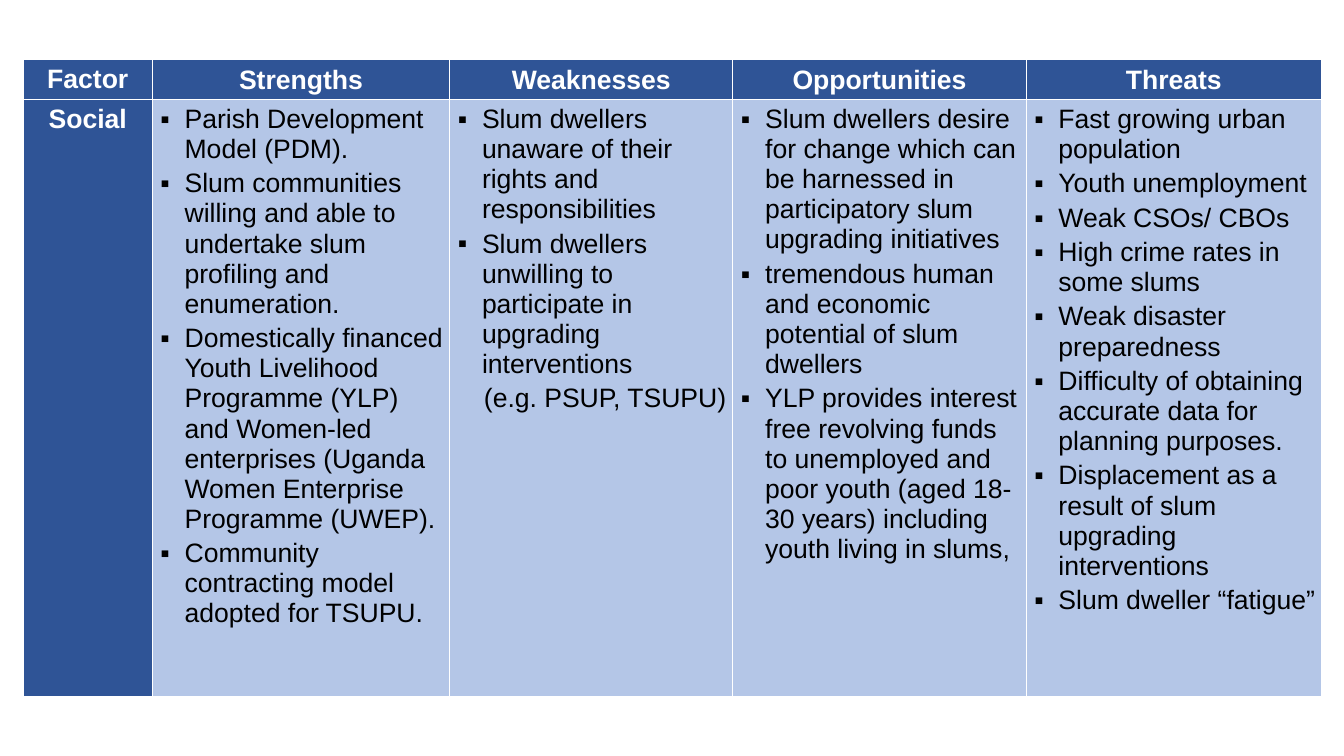
from dataclasses import dataclass

from lxml.etree import SubElement
from pptx import Presentation
from pptx.dml.color import RGBColor
from pptx.enum.text import MSO_ANCHOR, PP_ALIGN
from pptx.oxml import parse_xml
from pptx.oxml.ns import nsdecls, qn
from pptx.util import Pt


@dataclass(frozen=True)
class Theme:
    header: RGBColor = RGBColor(0x2F, 0x54, 0x96)
    body: RGBColor = RGBColor(0xB4, 0xC6, 0xE7)
    light: RGBColor = RGBColor(0xFF, 0xFF, 0xFF)
    dark: RGBColor = RGBColor(0x00, 0x00, 0x00)
    font: str = "Arial"
    size: float = 19


theme = Theme()

# Content: one heading and its points per column
factors = {
    "Strengths": [
        "Parish Development Model (PDM).",
        "Slum communities willing and able to undertake slum profiling and enumeration.",
        "Domestically financed Youth Livelihood Programme (YLP) and Women-led "
        "enterprises (Uganda Women Enterprise Programme (UWEP).",
        "Community contracting model adopted for TSUPU.",
    ],
    "Weaknesses": [
        "Slum dwellers unaware of their rights and responsibilities",
        "Slum dwellers unwilling to participate in upgrading interventions",
        "(e.g. PSUP, TSUPU)",
    ],
    "Opportunities": [
        "Slum dwellers desire for change which can be harnessed in participatory "
        "slum upgrading initiatives",
        "tremendous human and economic potential of slum dwellers",
        "YLP provides interest free revolving funds to unemployed and poor youth "
        "(aged 18-30 years) including youth living in slums,",
    ],
    "Threats": [
        "Fast growing urban population",
        "Youth unemployment",
        "Weak CSOs/ CBOs",
        "High crime rates in some slums",
        "Weak disaster preparedness",
        "Difficulty of obtaining accurate data for planning purposes.",
        "Displacement as a result of slum upgrading interventions",
        "Slum dweller “fatigue”",
    ],
}
column_widths = [92.2, 212.4, 202.3, 209.5, 211]
row_heights = [28.8, 426.2]


def style_cell(cell, fill):
    cell.margin_left = cell.margin_right = Pt(2.9)
    cell.margin_top = cell.margin_bottom = Pt(2.9)
    cell.fill.solid()
    cell.fill.fore_color.rgb = fill
    # Borders come before the fill in the cell properties
    properties = cell._tc.get_or_add_tcPr()
    for position, side in enumerate(("lnL", "lnR", "lnT", "lnB")):
        properties.insert(position, parse_xml(
            f'<a:{side} {nsdecls("a")} w="{Pt(1)}"><a:solidFill>'
            f'<a:srgbClr val="{theme.light}"/></a:solidFill></a:{side}>'))


def style_paragraph(para, color, bold, after, left=0, indent=0, bullet=False):
    para.alignment = PP_ALIGN.CENTER if bold else PP_ALIGN.LEFT
    para.line_spacing = 1.02
    para.space_after = Pt(after)
    properties = para._p.get_or_add_pPr()
    properties.set("marL", str(Pt(left)))
    properties.set("indent", str(Pt(indent)))
    if bullet:
        SubElement(properties, qn("a:buFont"), typeface=theme.font)
        SubElement(properties, qn("a:buChar"), char="▪")
    for span in para.runs:
        span.font.name = theme.font
        span.font.size = Pt(theme.size)
        span.font.bold = bold
        span.font.color.rgb = color


# Page
deck = Presentation()
deck.slide_width, deck.slide_height = Pt(960), Pt(540)
page = deck.slides.add_slide(deck.slide_layouts[6])

# Table frame
table = page.shapes.add_table(
    len(row_heights), len(column_widths), Pt(16.6), Pt(42.5),
    Pt(sum(column_widths)), Pt(sum(row_heights))).table
for column, width in zip(table.columns, column_widths):
    column.width = Pt(width)
for row, height in zip(table.rows, row_heights):
    row.height = Pt(height)

# Factor column
for row_index, label in enumerate(("Factor", "Social")):
    cell = table.cell(row_index, 0)
    style_cell(cell, theme.header)
    cell.text_frame.text = label
    style_paragraph(cell.text_frame.paragraphs[0], theme.light, True, 8)

# Headings and their points
for column_index, (heading, points) in enumerate(factors.items(), start=1):
    cell = table.cell(0, column_index)
    style_cell(cell, theme.header)
    cell.vertical_anchor = MSO_ANCHOR.MIDDLE
    cell.text_frame.text = heading
    style_paragraph(cell.text_frame.paragraphs[0], theme.light, True, 3, 10.1, -14.4)

    cell = table.cell(1, column_index)
    style_cell(cell, theme.body)
    cell.text_frame.text = "\n".join(points)
    for para in cell.text_frame.paragraphs:
        if para.text.startswith("("):
            style_paragraph(para, theme.dark, False, 3, 21.6)
        else:
            style_paragraph(para, theme.dark, False, 3, 20.2, -17.3, bullet=True)

deck.save("out.pptx")
